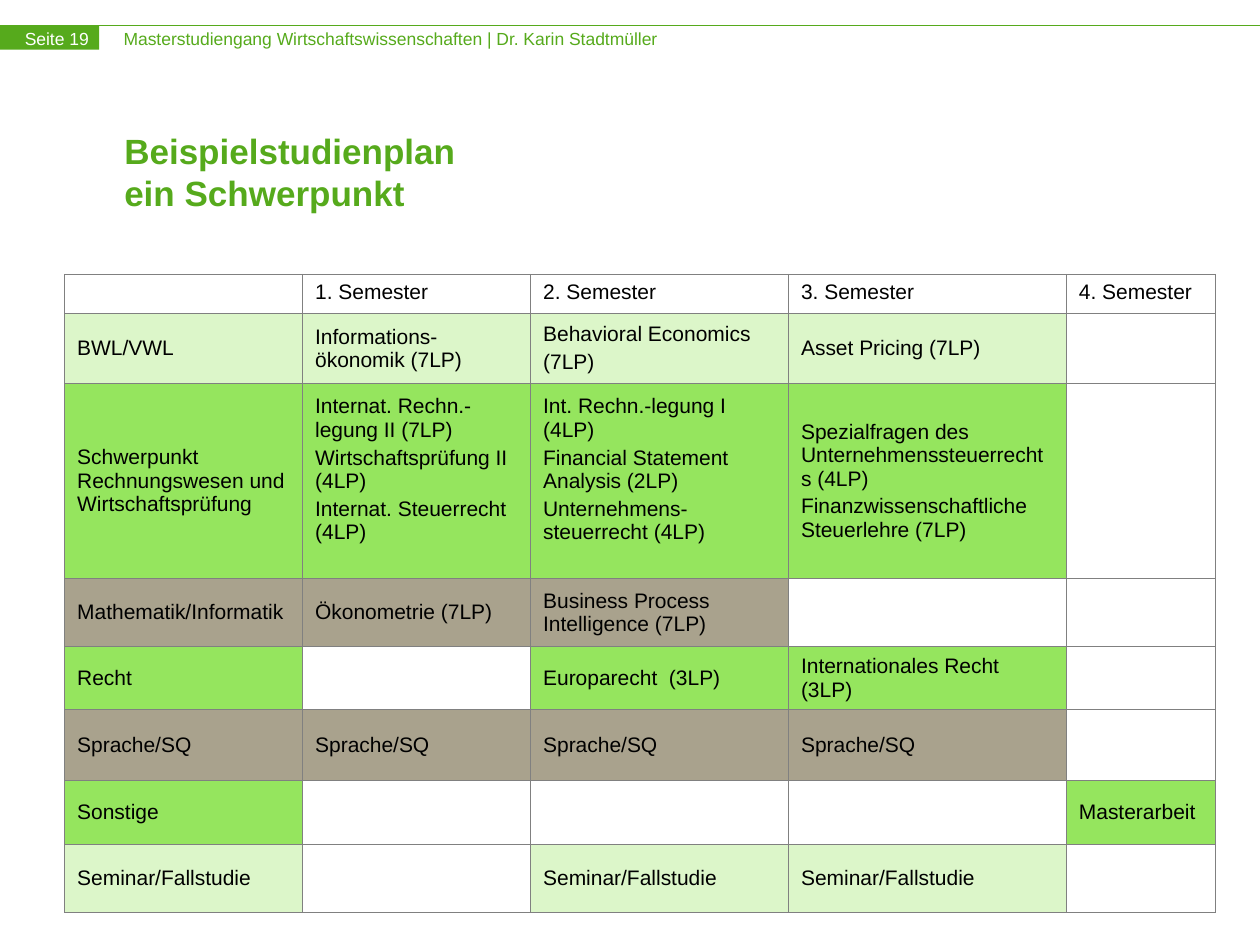
"""Build the study plan slide with its semester table."""
from dataclasses import dataclass
from typing import Optional

import lxml.etree
import pptx
import pptx.dml.color
import pptx.enum.shapes
import pptx.enum.text
import pptx.oxml.ns
import pptx.util

Pt = pptx.util.Pt
Middle = pptx.enum.text.MSO_ANCHOR.MIDDLE
Top = pptx.enum.text.MSO_ANCHOR.TOP


@dataclass(frozen=True)
class Theme:
    font: str = "Arial"
    green: str = "56AA1C"
    light: str = "DCF6C9"
    bright: str = "95E55E"
    taupe: str = "A9A28D"
    white: str = "FFFFFF"
    black: str = "000000"
    grey: str = "808080"
    title_size: float = 20
    table_size: float = 12
    header_size: float = 10
    line_width: float = 0.75


THEME = Theme()


@dataclass(frozen=True)
class PlanRow:
    height: float
    fill: str
    cells: tuple[str, ...]
    anchor: pptx.enum.text.MSO_ANCHOR = Middle
    bottom_margins: tuple[float, ...] = (3.6,) * 5


@dataclass(frozen=True)
class Label:
    text: str
    left: float
    top: float
    width: float
    height: float
    color: str


COLUMN_WIDTHS = (136, 130.3, 147.4, 158.8, 85.1)
PLAN = (
    PlanRow(22.3, THEME.white,
            ("", "1. Semester", "2. Semester", "3. Semester", "4. Semester"), Top),
    PlanRow(40, THEME.light,
            ("BWL/VWL", "Informations- ökonomik (7LP)",
             "Behavioral Economics\n(7LP)", "Asset Pricing (7LP)", "")),
    PlanRow(105.7, THEME.bright,
            ("Schwerpunkt Rechnungswesen und Wirtschaftsprüfung",
             "Internat. Rechn.-legung II (7LP)\nWirtschaftsprüfung II (4LP)\n"
             "Internat. Steuerrecht (4LP)",
             "Int. Rechn.-legung I (4LP)\nFinancial Statement Analysis (2LP)\n"
             "Unternehmens-steuerrecht (4LP)",
             "Spezialfragen des Unternehmenssteuerrechts (4LP)\n"
             "Finanzwissenschaftliche Steuerlehre (7LP)", ""),
            bottom_margins=(3.6, 16.6, 16.6, 3.6, 3.6)),
    PlanRow(38.9, THEME.taupe,
            ("Mathematik/Informatik", "Ökonometrie (7LP)",
             "Business Process Intelligence (7LP)", "", "")),
    PlanRow(34.3, THEME.bright,
            ("Recht", "", "Europarecht  (3LP)", "Internationales Recht (3LP)", "")),
    PlanRow(40.6, THEME.taupe, ("Sprache/SQ",) * 4 + ("",)),
    PlanRow(36.6, THEME.bright, ("Sonstige", "", "", "", "Masterarbeit")),
    PlanRow(38.9, THEME.light,
            ("Seminar/Fallstudie", "", "Seminar/Fallstudie", "Seminar/Fallstudie", "")),
)
LABELS = (
    Label("Masterstudiengang Wirtschaftswissenschaften | Dr. Karin Stadtmüller",
          70.6, 15.8, 475, 12, THEME.green),
    Label("Seite 19", 14.2, 15.8, 45, 12, THEME.white),
)


def rgb(color: str) -> pptx.dml.color.RGBColor:
    return pptx.dml.color.RGBColor.from_string(color)


def add_run(paragraph, text: str, size: float, color: str, bold: Optional[bool] = None) -> None:
    run = paragraph.add_run()
    run.text = text
    run.font.name = THEME.font
    run.font.size = Pt(size)
    run.font.bold = bold
    run.font.color.rgb = rgb(color)


def add_child(parent, tag: str, **attributes: str):
    return lxml.etree.SubElement(parent, pptx.oxml.ns.qn(tag), attributes)


def draw_label(slide, label: Label) -> None:
    shape = slide.shapes.add_textbox(
        Pt(label.left), Pt(label.top), Pt(label.width), Pt(label.height))
    frame = shape.text_frame
    frame.word_wrap = True
    frame.margin_left = frame.margin_top = frame.margin_right = frame.margin_bottom = 0
    add_run(frame.paragraphs[0], label.text, THEME.header_size, label.color)


def draw_header(slide) -> None:
    line = slide.shapes.add_connector(
        pptx.enum.shapes.MSO_CONNECTOR.STRAIGHT, Pt(0), Pt(14.4), Pt(720), Pt(14.4))
    line.line.color.rgb = rgb(THEME.green)
    line.line.width = Pt(THEME.line_width)
    add_child(line._element.spPr, "a:effectLst")
    block = slide.shapes.add_shape(
        pptx.enum.shapes.MSO_SHAPE.RECTANGLE, Pt(0), Pt(14.4), Pt(56.7), Pt(14))
    block.shadow.inherit = False
    block.fill.solid()
    block.fill.fore_color.rgb = rgb(THEME.green)
    block.line.fill.background()
    for label in LABELS:
        draw_label(slide, label)


def fill_title(slide) -> None:
    title = slide.shapes.title
    title.left, title.top, title.width, title.height = Pt(63.8), Pt(72), Pt(614), Pt(52)
    frame = title.text_frame
    frame.auto_size = pptx.enum.text.MSO_AUTO_SIZE.NONE
    frame.vertical_anchor = Middle
    paragraph = frame.paragraphs[0]
    paragraph.alignment = pptx.enum.text.PP_ALIGN.LEFT
    paragraph.line_spacing = Pt(24)
    add_run(paragraph, "Beispielstudienplan", THEME.title_size, THEME.green, True)
    paragraph.add_line_break()
    add_run(paragraph, "ein Schwerpunkt", THEME.title_size, THEME.green, True)


def draw_borders(cell) -> None:
    properties = cell._tc.get_or_add_tcPr()
    for side in ("a:lnL", "a:lnR", "a:lnT", "a:lnB"):
        border = add_child(properties, side, w=str(Pt(THEME.line_width)))
        add_child(add_child(border, "a:solidFill"), "a:srgbClr", val=THEME.grey)


def fill_cell(cell, text: str, row: PlanRow, bottom_margin: float) -> None:
    draw_borders(cell)
    cell.fill.solid()
    cell.fill.fore_color.rgb = rgb(row.fill if text else THEME.white)
    cell.vertical_anchor = row.anchor
    cell.margin_left = cell.margin_right = Pt(7.2)
    cell.margin_top, cell.margin_bottom = Pt(3.6), Pt(bottom_margin)
    frame = cell.text_frame
    if not text:
        add_child(frame.paragraphs[0]._p, "a:endParaRPr", sz=str(int(THEME.table_size * 100)))
        return
    for index, content in enumerate(text.split("\n")):
        paragraph = frame.add_paragraph() if index else frame.paragraphs[0]
        paragraph.space_before = Pt(2.4 if index else 0)
        add_run(paragraph, content, THEME.table_size, THEME.black)


def draw_plan(slide) -> None:
    table = slide.shapes.add_table(
        len(PLAN), len(COLUMN_WIDTHS), Pt(36.9), Pt(156.8),
        Pt(sum(COLUMN_WIDTHS)), Pt(sum(row.height for row in PLAN))).table
    table.first_row = table.horz_banding = False
    for column, width in zip(table.columns, COLUMN_WIDTHS):
        column.width = Pt(width)
    for table_row, row in zip(table.rows, PLAN):
        table_row.height = Pt(row.height)
        for cell, text, margin in zip(table_row.cells, row.cells, row.bottom_margins):
            fill_cell(cell, text, row, margin)


def main() -> None:
    presentation = pptx.Presentation()
    presentation.slide_width, presentation.slide_height = Pt(720), Pt(540)
    slide = presentation.slides.add_slide(presentation.slide_layouts[5])
    draw_header(slide)
    fill_title(slide)
    draw_plan(slide)
    presentation.save("out.pptx")


if __name__ == "__main__":
    main()
